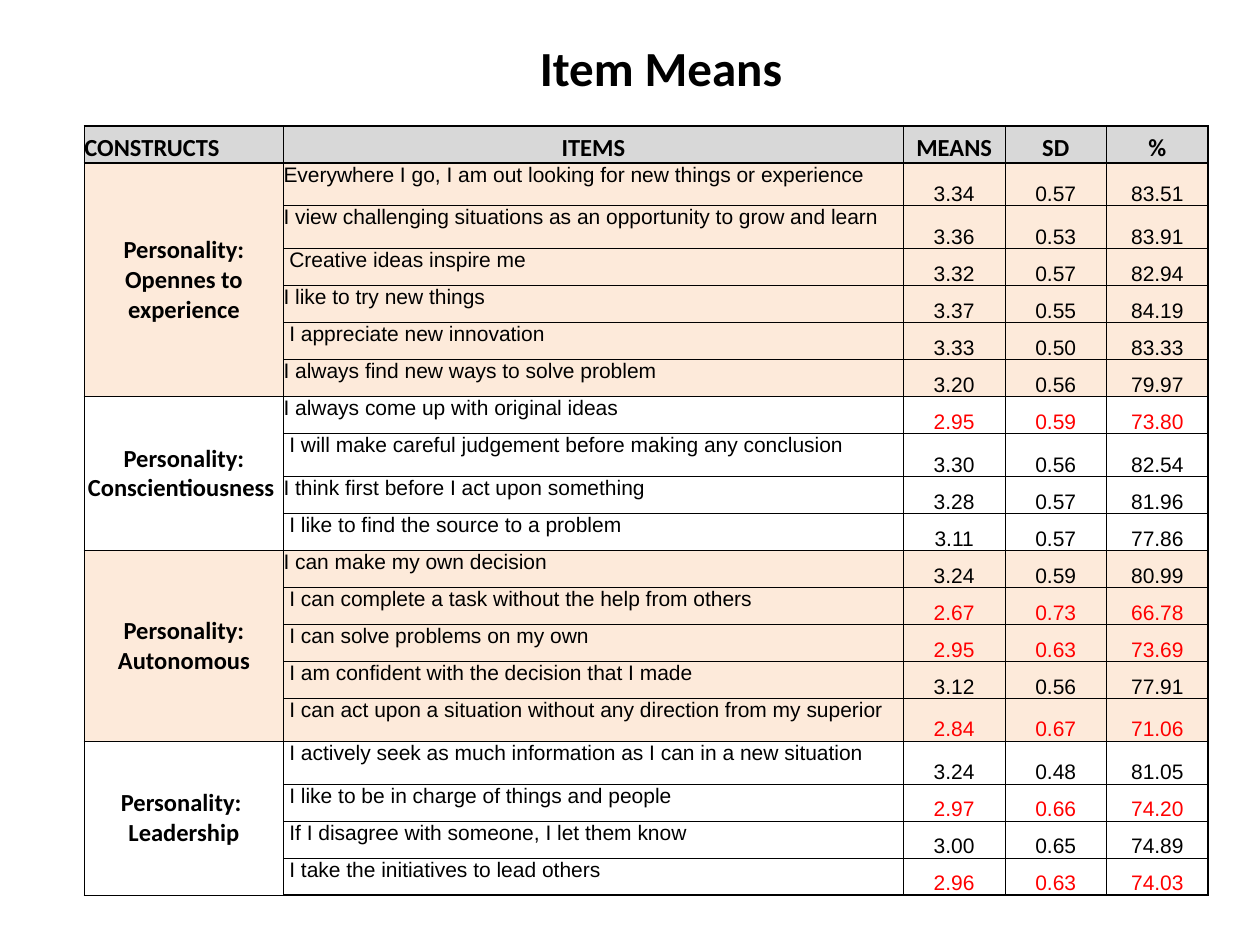
from lxml.etree import SubElement
from pptx import Presentation
from pptx.dml.color import RGBColor as Rgb
from pptx.enum.text import MSO_ANCHOR as Anchor, PP_ALIGN as Align
from pptx.oxml.ns import qn
from pptx.util import Inches, Pt

BLACK = Rgb(0x00, 0x00, 0x00)
RED = Rgb(0xFF, 0x00, 0x00)
GREY = Rgb(0xD8, 0xD8, 0xD8)
PEACH = Rgb(0xFD, 0xEA, 0xDA)
WHITE = Rgb(0xFF, 0xFF, 0xFF)

TITLE = {"name": "Calibri", "size": Pt(28), "bold": True}
HEAD = {"name": "Calibri", "size": Pt(14), "bold": True}
BODY = {"name": "Arial", "size": Pt(12), "bold": False}

LABELS = ("CONSTRUCTS", "ITEMS", "MEANS", "SD", "%")
GROUPS = [
    ("Personality: Opennes to experience", PEACH, [
        ("Everywhere I go, I am out looking for new things or experience", "3.34", "0.57", "83.51"),
        ("I view challenging situations as an opportunity to grow and learn", "3.36", "0.53", "83.91"),
        (" Creative ideas inspire me", "3.32", "0.57", "82.94"),
        ("I like to try new things", "3.37", "0.55", "84.19"),
        (" I appreciate new innovation", "3.33", "0.50", "83.33"),
        ("I always find new ways to solve problem", "3.20", "0.56", "79.97"),
    ]),
    ("Personality: Conscientiousness ", WHITE, [
        ("I always come up with original ideas", "2.95", "0.59", "73.80"),
        (" I will make careful judgement before making any conclusion", "3.30", "0.56", "82.54"),
        ("I think first before I act upon something", "3.28", "0.57", "81.96"),
        (" I like to find the source to a problem", "3.11", "0.57", "77.86"),
    ]),
    ("Personality: Autonomous", PEACH, [
        ("I can make my own decision", "3.24", "0.59", "80.99"),
        (" I can complete a task without the help from others", "2.67", "0.73", "66.78"),
        (" I can solve problems on my own", "2.95", "0.63", "73.69"),
        (" I am confident with the decision that I made", "3.12", "0.56", "77.91"),
        (" I can act upon a situation without any direction from my superior", "2.84", "0.67", "71.06"),
    ]),
    ("Personality: \nLeadership", WHITE, [
        (" I actively seek as much information as I can in a new situation", "3.24", "0.48", "81.05"),
        (" I like to be in charge of things and people", "2.97", "0.66", "74.20"),
        (" If I disagree with someone, I let them know", "3.00", "0.65", "74.89"),
        (" I take the initiatives to lead others", "2.96", "0.63", "74.03"),
    ]),
]
LONG = 55  # items with more letters get a tall row
TALL = 0.34
CUTOFF = 3  # lower means are marked red


def style(frame, font, color, align):
    for para in frame.paragraphs:
        para.alignment = align
        for run in para.runs:
            run.font.color.rgb = color
            for key, value in font.items():
                setattr(run.font, key, value)


def border(cell, widths):
    """Draw black edges; widths maps L, R, T and B to points."""
    props = cell._tc.get_or_add_tcPr()
    for spot, side in enumerate("LRTB"):
        line = SubElement(props, qn(f"a:ln{side}"), w=str(Pt(widths[side])))
        fill = SubElement(line, qn("a:solidFill"))
        SubElement(fill, qn("a:srgbClr"), val=str(BLACK))
        props.insert(spot, line)


def fill_cell(cell, text, back, font, color, align, anchor):
    cell.text = text
    cell.fill.solid()
    cell.fill.fore_color.rgb = back
    cell.vertical_anchor = anchor
    for side in ("left", "right", "top", "bottom"):
        setattr(cell, f"margin_{side}", 0)
    style(cell.text_frame, font, color, align)


def fill_row(table, row, texts, back, font, first, last):
    """Fill one row; first and last tell if it opens or ends its group."""
    end = len(LABELS) - 1
    low = row > 0 and float(texts[2]) < CUTOFF
    for col, text in enumerate(texts):
        cell = table.cell(row, col)
        left = col == (1 if row else 0)
        fill_cell(cell, text, back,
                  HEAD if col == 0 else font,
                  RED if low and col > 1 else BLACK,
                  Align.LEFT if left else Align.CENTER,
                  Anchor.BOTTOM if row == 0 or col > 1
                  else Anchor.TOP if col else Anchor.MIDDLE)
        thick = {"L": col == 0, "R": col == end, "T": first, "B": last}
        border(cell, {side: 1 if on else 0.5 for side, on in thick.items()})


def add_title(slide, left, top, width, height):
    title = slide.shapes.title
    box = {"left": left, "top": top, "width": width, "height": height}
    for key, value in box.items():
        setattr(title, key, Inches(value))
    frame = title.text_frame
    frame.text = "Item Means"
    frame.word_wrap = False
    frame.vertical_anchor = Anchor.TOP
    style(frame, TITLE, BLACK, Align.CENTER)


def add_means(slide, left, top, width, height):
    """Add the table of item means, grouped by construct."""
    items = [item for group in GROUPS for item in group[2]]
    box = map(Inches, (left, top, width, height))
    table = slide.shapes.add_table(len(items) + 1, len(LABELS), *box).table
    table.first_row = table.horz_banding = False

    wide = [1.58, 4.92]
    wide += [(width - sum(wide)) / 3] * 3
    for col, size in zip(table.columns, wide):
        col.width = Inches(size)
    tall = [False] + [len(item[0]) > LONG for item in items]
    short = (height - TALL * sum(tall)) / (len(tall) - sum(tall))
    for row, big in zip(table.rows, tall):
        row.height = Inches(TALL if big else short)

    fill_row(table, 0, LABELS, GREY, HEAD, True, True)
    start = 1
    for name, back, group in GROUPS:
        stop = start + len(group) - 1
        for row, item in enumerate(group, start):
            label = name if row == start else ""
            fill_row(table, row, (label, *item), back, BODY,
                     row == start, row == stop)
        table.cell(start, 0).merge(table.cell(stop, 0))
        start = stop + 1


def main():
    deck = Presentation()
    deck.slide_width, deck.slide_height = Inches(10), Inches(7.5)
    slide = deck.slides.add_slide(deck.slide_layouts[5])
    add_means(slide, 0.67, 1, 8.92, 6.11)
    add_title(slide, 4.17, 0.25, 2.15, 0.57)
    deck.save("out.pptx")


if __name__ == "__main__":
    main()
